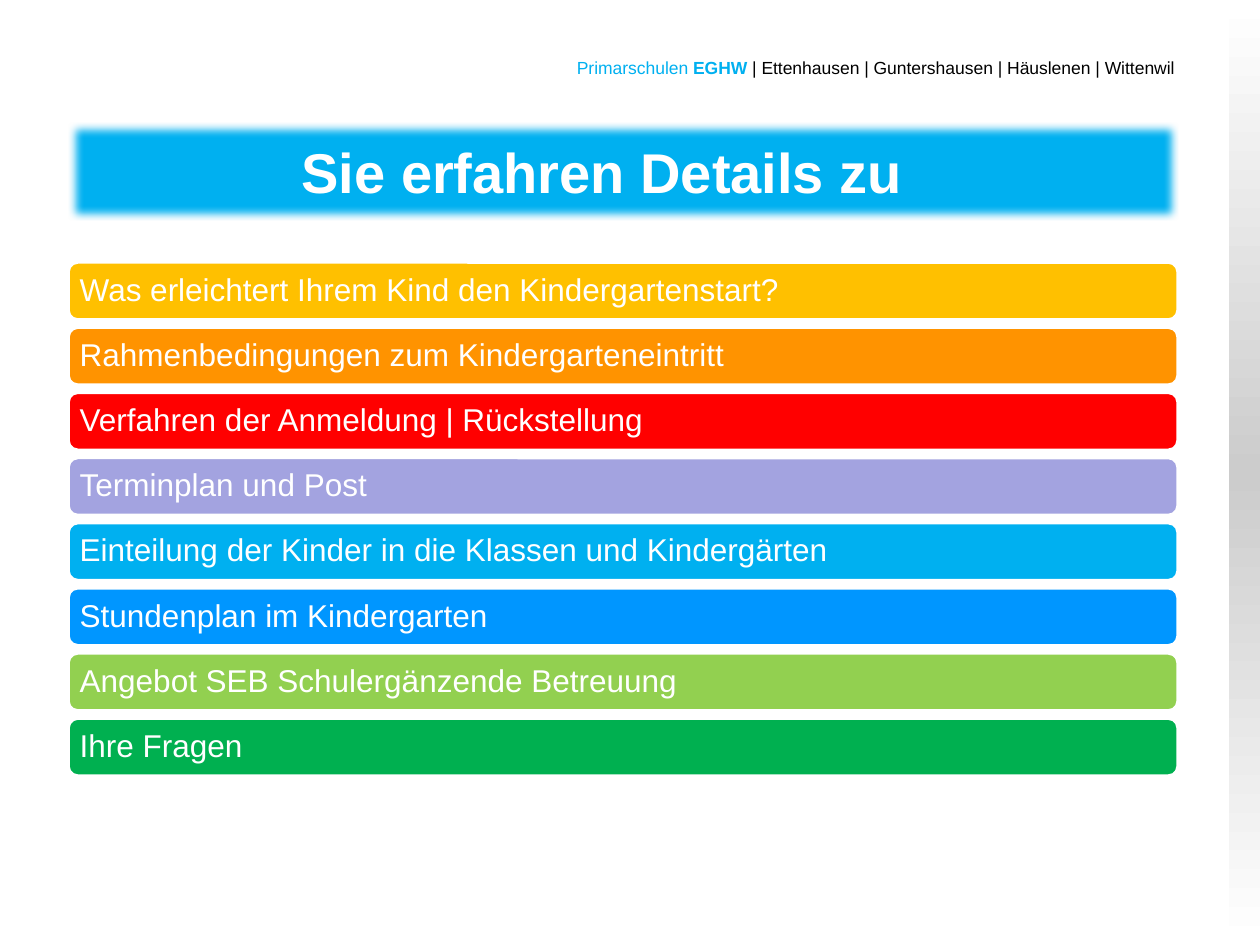
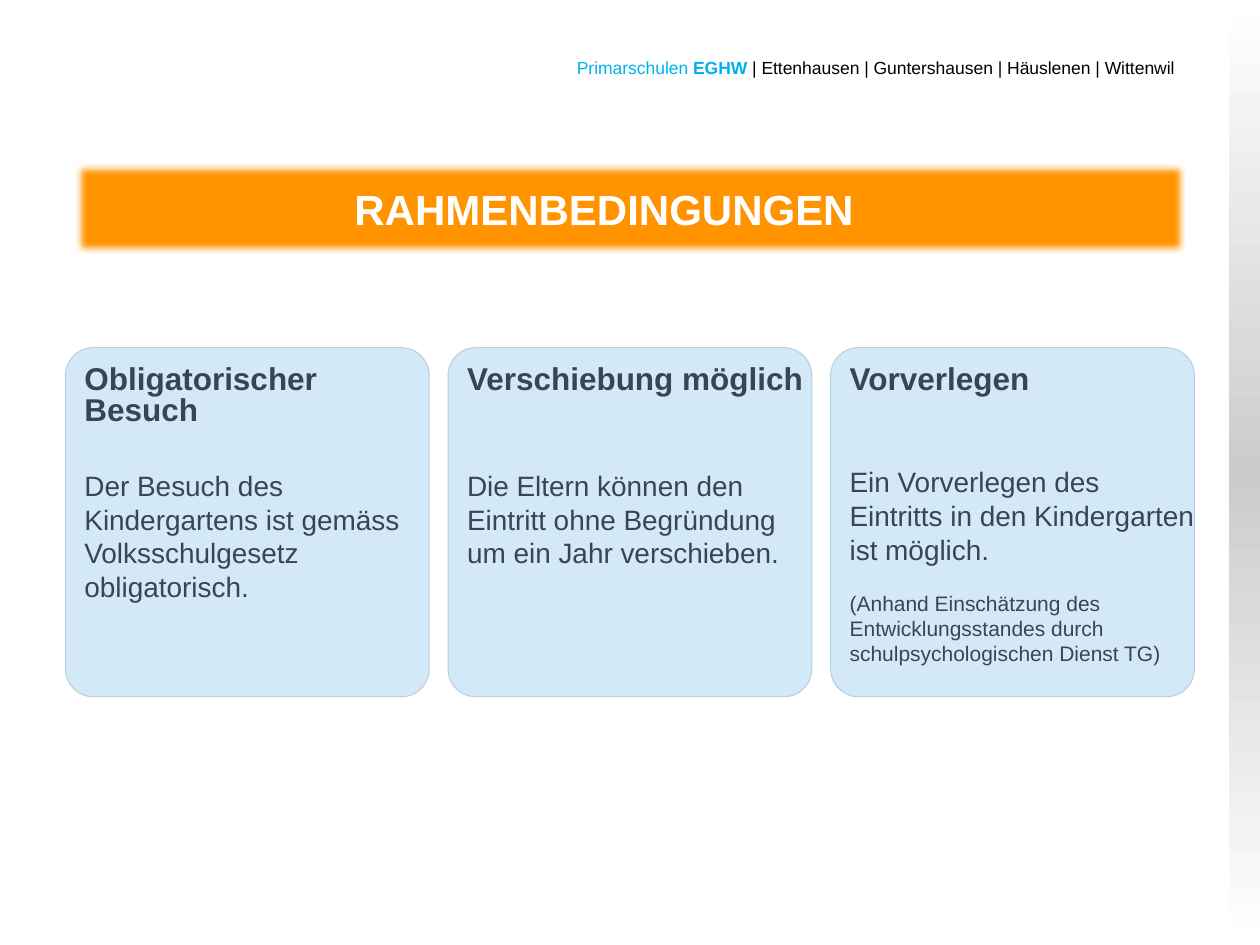
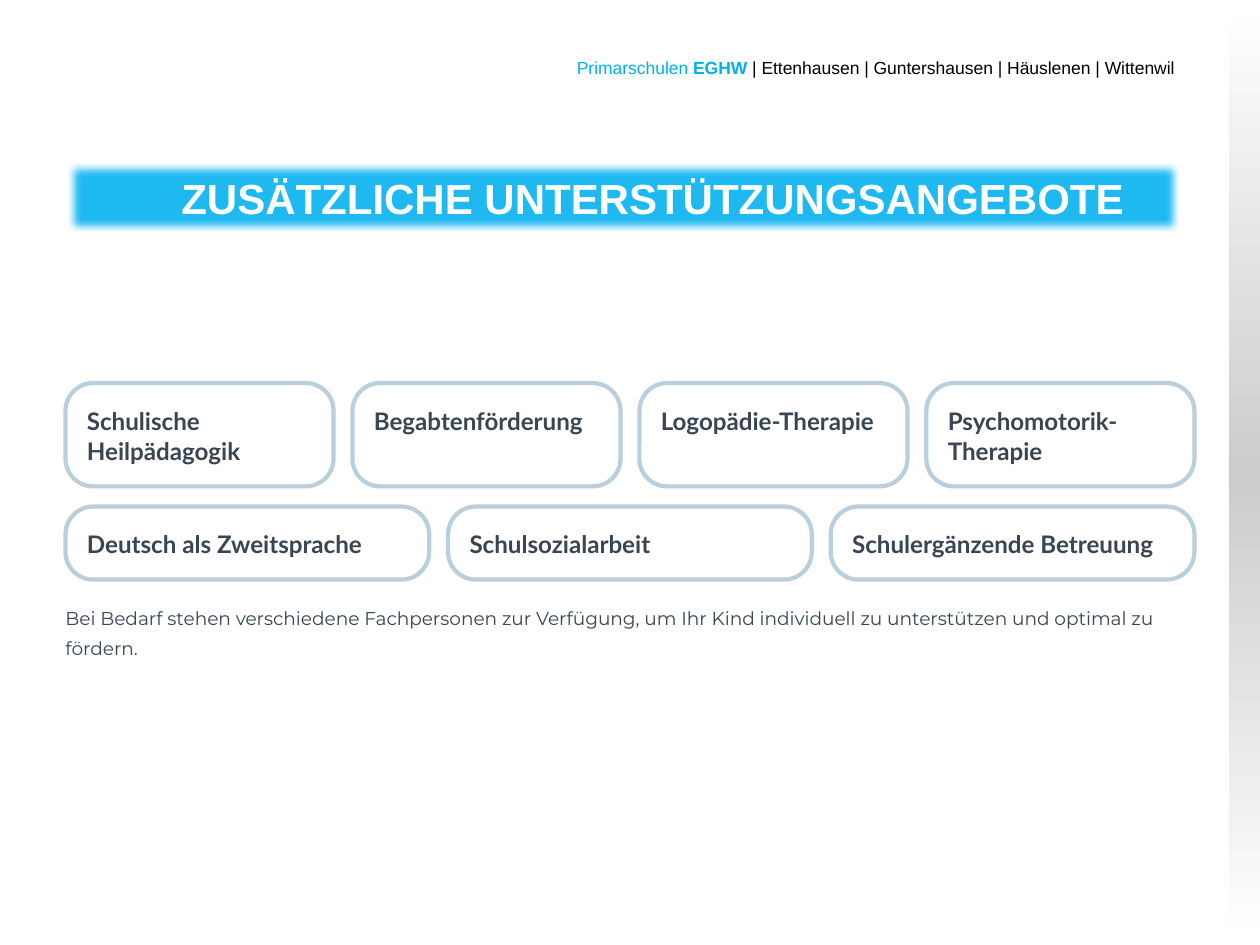
from lxml.etree import SubElement
from pptx import Presentation
from pptx.dml.color import RGBColor
from pptx.enum.shapes import MSO_SHAPE
from pptx.enum.text import MSO_ANCHOR, MSO_AUTO_SIZE, PP_ALIGN
from pptx.oxml import parse_xml
from pptx.oxml.ns import nsdecls, qn
from pptx.util import Inches, Pt

# Shared look
SKY, ORANGE, WHITE = "00B0F0", "FF9300", "FFFFFF"
INK, PALE, EDGE = "384653", "D4E9F7", "BACFDD"
LEFT, WIDE, GAP, RADIUS = 0.52, 8.96, 0.15, 0.22

# Content
HEADER = [
    ("Primarschulen ", SKY, False),
    ("EGHW", SKY, True),
    (" | Ettenhausen | Guntershausen | Häuslenen | Wittenwil", "000000", False),
]
TOPICS = [
    ("Was erleichtert Ihrem Kind den Kindergartenstart?", "FFC000"),
    ("Rahmenbedingungen zum Kindergarteneintritt", ORANGE),
    ("Verfahren der Anmeldung | Rückstellung", "FF0000"),
    ("Terminplan und Post", "A3A3E0"),
    ("Einteilung der Kinder in die Klassen und Kindergärten", SKY),
    ("Stundenplan im Kindergarten", "0096FF"),
    ("Angebot SEB Schulergänzende Betreuung", "92D050"),
    ("Ihre Fragen", "00B050"),
]
# Heading lines, body, small note, top of the body
RULES = [
    (["Obligatorischer", "Besuch"],
     "Der Besuch des Kindergartens ist gemäss Volksschulgesetz obligatorisch.",
     None, 3.72),
    (["Verschiebung möglich"],
     "Die Eltern können den Eintritt ohne Begründung um ein Jahr verschieben.",
     None, 3.72),
    (["Vorverlegen"],
     "Ein Vorverlegen des Eintritts in den Kindergarten ist möglich.",
     "(Anhand Einschätzung des Entwicklungsstandes durch "
     "schulpsychologischen Dienst TG)", 3.69),
]
# Top, height, labels of each row
OFFERS = [
    (3.04, 0.82, ["Schulische Heilpädagogik", "Begabtenförderung",
                  "Logopädie-Therapie", "Psychomotorik-Therapie"]),
    (4.02, 0.58, ["Deutsch als Zweitsprache", "Schulsozialarbeit",
                  "Schulergänzende Betreuung"]),
]
CLOSING = ("Bei Bedarf stehen verschiedene Fachpersonen zur Verfügung, um Ihr Kind "
           "individuell zu unterstützen und optimal zu fördern.")


def rgb(code):
    return RGBColor.from_string(code)


def style(para, size, color=INK, name="Arial", bold=False, lead=None):
    font = para.font
    font.size, font.name, font.bold = Pt(size), name, bold
    font.color.rgb = rgb(color)
    if lead:
        para.line_spacing = lead


def add_box(slide, x, y, w, h, kind, fill, edge=None, width=0):
    box = slide.shapes.add_shape(kind, Inches(x), Inches(y), Inches(w), Inches(h))
    box.shadow.inherit = False
    box.fill.solid()
    box.fill.fore_color.rgb = rgb(fill)
    if edge:
        box.line.color.rgb = rgb(edge)
        box.line.width = Pt(width)
    else:
        box.line.fill.background()
    return box


def add_text(slide, x, y, w, h, lines, size, **look):
    frame = slide.shapes.add_textbox(
        Inches(x), Inches(y), Inches(w), Inches(h)).text_frame
    frame.word_wrap = True
    frame.margin_left = frame.margin_right = 0
    frame.margin_top = frame.margin_bottom = 0
    frame.text = "\n".join(lines)
    for para in frame.paragraphs:
        style(para, size, **look)
    return frame


def add_card(slide, x, y, w, h, fill, width):
    card = add_box(slide, x, y, w, h, MSO_SHAPE.ROUNDED_RECTANGLE, fill, EDGE, width)
    card.adjustments[0] = RADIUS / min(w, h)


def columns(count):
    """Left edges and common width of equal columns."""
    w = (WIDE - (count - 1) * GAP) / count
    return [LEFT + i * (w + GAP) for i in range(count)], w


def add_slide(deck, text, x, y, h, color, size, soft, align=PP_ALIGN.CENTER, alpha=None):
    """Title-only slide whose title is a soft-edged band."""
    slide = deck.slides.add_slide(deck.slide_layouts[5])
    band = slide.shapes.title
    band.left, band.top = Inches(x), Inches(y)
    band.width, band.height = Inches(8.81), Inches(h)
    band.fill.solid()
    band.fill.fore_color.rgb = rgb(color)
    props = band.element.spPr
    if alpha:
        tint = props.find(".//" + qn("a:srgbClr"))
        SubElement(tint, qn("a:alpha")).set("val", str(alpha * 1000))
    band.shadow.inherit = False
    glow = SubElement(props.find(qn("a:effectLst")), qn("a:softEdge"))
    glow.set("rad", str(Pt(soft)))
    frame = band.text_frame
    frame.text = text
    frame.auto_size = MSO_AUTO_SIZE.NONE
    frame.vertical_anchor = MSO_ANCHOR.MIDDLE
    frame.margin_right = Inches(0.43)
    para = frame.paragraphs[0]
    para.alignment = align
    style(para, size, WHITE, bold=True)
    return slide


def add_frame(slide):
    """Side strip and header, moved to the layout so every slide has them."""
    strip = add_box(slide, 9.75, 0, 0.25, 7.5, MSO_SHAPE.RECTANGLE, WHITE)
    stops = "".join(
        f'<a:gs pos="{pos}"><a:srgbClr val="{color}"/></a:gs>'
        for pos, color in [(0, WHITE), (50000, "CCCCCC"), (100000, WHITE)])
    props = strip.element.spPr
    props.replace(props.find(qn("a:solidFill")), parse_xml(
        f'<a:gradFill {nsdecls("a")} rotWithShape="1"><a:gsLst>{stops}</a:gsLst>'
        '<a:lin ang="5400000" scaled="0"/></a:gradFill>'))
    head = slide.shapes.add_textbox(
        Inches(4.48), Inches(0.4), Inches(4.98), Inches(0.27))
    head.text_frame.word_wrap = True
    para = head.text_frame.paragraphs[0]
    for text, color, bold in HEADER:
        run = para.add_run()
        run.text = text
        run.font.size, run.font.name, run.font.bold = Pt(10), "Arial", bold
        run.font.color.rgb = rgb(color)
    tree = slide.slide_layout.shapes.element
    for shape in (strip, head):
        tree.append(shape.element)


def build_topics(deck):
    slide = add_slide(deck, "Sie erfahren Details zu", 0.54, 0.97, 0.78, SKY, 32, 5)
    add_frame(slide)
    step = (5.7 - 2.08) / (len(TOPICS) - 1)
    for i, (text, color) in enumerate(TOPICS):
        bar = add_box(slide, 0.54, 2.08 + i * step, 8.81, 0.46,
                      MSO_SHAPE.ROUNDED_RECTANGLE, color, WHITE, 2)
        frame = bar.text_frame
        frame.margin_left = frame.margin_right = Inches(0.07)
        frame.margin_top = frame.margin_bottom = 0
        frame.vertical_anchor = MSO_ANCHOR.MIDDLE
        frame.text = text
        para = frame.paragraphs[0]
        para.alignment = PP_ALIGN.LEFT
        style(para, 18, WHITE, lead=0.9)


def build_rules(deck):
    slide = add_slide(deck, "RAHMENBEDINGUNGEN ", 0.6, 1.3, 0.71, ORANGE, 24, 4)
    lefts, w = columns(len(RULES))
    for x, (head, body, note, top) in zip(lefts, RULES):
        add_card(slide, x, 2.76, w, 2.77, PALE, 0.6)
        add_text(slide, x + 0.15, 2.91, w - 0.15, 0.24, head, 18,
                 bold=True, lead=Pt(17.5))
        frame = add_text(slide, x + 0.15, top, w - 0.15, 1.18, [body], 16)
        if note:
            para = frame.add_paragraph()
            para.text = note
            para.space_before = Pt(14)
            style(para, 12)


def build_offers(deck):
    slide = add_slide(deck, "ZUSÄTZLICHE UNTERSTÜTZUNGSANGEBOTE", 0.54, 1.3, 0.54,
                      SKY, 24, 4, PP_ALIGN.RIGHT, 88)
    for y, h, labels in OFFERS:
        lefts, w = columns(len(labels))
        for x, label in zip(lefts, labels):
            add_card(slide, x, y, w, h, WHITE, 2.4)
            add_text(slide, x + 0.17, y + 0.17, w - 0.17, h - 0.34, [label], 13.8,
                     name="Lato", bold=True, lead=Pt(17.5))
    add_text(slide, LEFT, 4.76, WIDE, 0.47, [CLOSING], 10.6,
             name="Montserrat", lead=Pt(16.9))


def main():
    deck = Presentation()
    deck.slide_width, deck.slide_height = Inches(10), Inches(7.5)
    build_topics(deck)
    build_rules(deck)
    build_offers(deck)
    deck.save("out.pptx")


if __name__ == "__main__":
    main()
